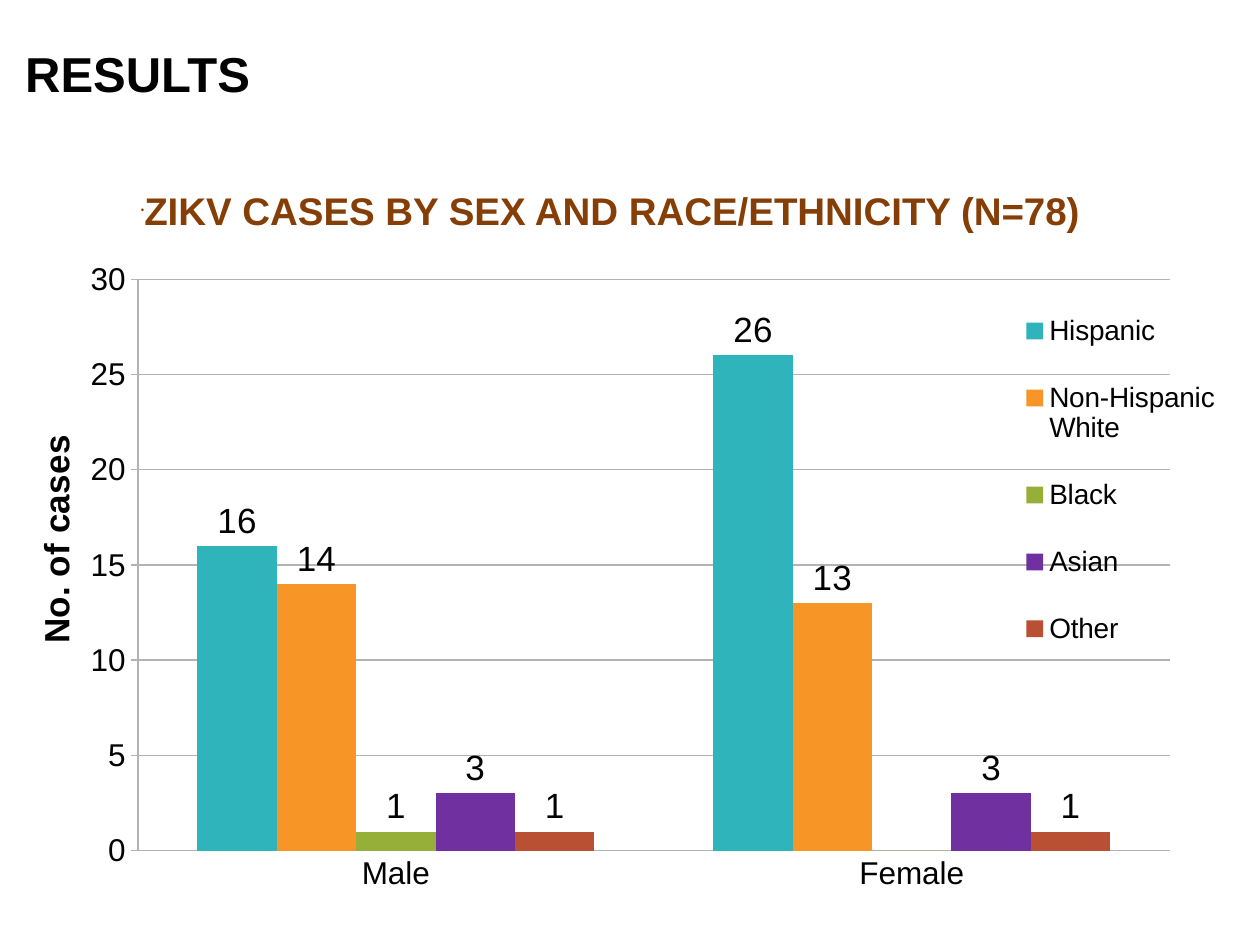
from lxml import etree
from pptx import Presentation
from pptx import util as u
from pptx.chart.data import CategoryChartData
from pptx.dml.color import RGBColor
from pptx.enum import chart as charts, text
from pptx.oxml.ns import qn

COLORS = {
    "text": "020202", "heading": "863E07", "grid": "B3B3B3",
    "Hispanic": "2FB4BC", "Non-Hispanic White": "F79527",
    "Black": "95AF39", "Asian": "7030A0", "Other": "B95033",
}
CASES = {
    "Hispanic": (16, 26), "Non-Hispanic White": (14, 13),
    "Black": (1, 0), "Asian": (3, 3), "Other": (1, 1),
}


def style_font(font, size, color="text", bold=False):
    font.name = "Arial"
    font.size = u.Pt(size)
    font.bold = bold
    font.color.rgb = RGBColor.from_string(COLORS[color])


def set_layout(parent, index, inner=False, **shares):
    for old in parent.findall(qn("c:layout")):
        parent.remove(old)
    layout = etree.Element(qn("c:layout"))
    parent.insert(index, layout)
    manual = etree.SubElement(layout, qn("c:manualLayout"))
    settings = {"layoutTarget": "inner"} if inner else {}
    settings.update(xMode="edge", yMode="edge", **shares)
    for name, value in settings.items():
        etree.SubElement(manual, qn(f"c:{name}")).set("val", str(value))


presentation = Presentation()
presentation.slide_width = u.Inches(10)
presentation.slide_height = u.Inches(7.5)
slide = presentation.slides.add_slide(presentation.slide_layouts[1])

title, heading = slide.placeholders
title.left, title.top = u.Inches(0.2), u.Inches(0.3)
title.width, title.height = u.Inches(6.18), u.Inches(0.52)
frame = title.text_frame
frame.text = "RESULTS"
frame.vertical_anchor = text.MSO_ANCHOR.BOTTOM
frame.auto_size = text.MSO_AUTO_SIZE.NONE
frame.margin_left = frame.margin_right = frame.margin_top = frame.margin_bottom = 0
paragraph = frame.paragraphs[0]
paragraph.alignment = text.PP_ALIGN.LEFT
paragraph.line_spacing = 0.9
style_font(paragraph.font, 28, bold=True)

heading.left, heading.top = u.Inches(0.2), u.Inches(1.25)
heading.width, heading.height = u.Inches(9.29), u.Inches(0.52)
frame = heading.text_frame
frame.text = "ZIKV CASES BY SEX AND RACE/ETHNICITY (N=78)"
frame.auto_size = text.MSO_AUTO_SIZE.NONE
paragraph = frame.paragraphs[0]
paragraph.alignment = text.PP_ALIGN.CENTER
paragraph.line_spacing = 1.5
paragraph.space_before = u.Pt(0)
paragraph.space_after = u.Pt(10)
properties = paragraph._p.get_or_add_pPr()
properties.set("marL", "0")
properties.set("indent", "0")
etree.SubElement(properties, qn("a:buSzPct")).set("val", "25000")
etree.SubElement(properties, qn("a:buChar")).set("char", "•")
style_font(paragraph.font, 22, "heading", bold=True)

data = CategoryChartData(number_format="General")
data.categories = ["Male", "Female"]
for group, values in CASES.items():
    data.add_series(group, values)
chart = slide.shapes.add_chart(
    charts.XL_CHART_TYPE.COLUMN_CLUSTERED,
    u.Inches(0.12), u.Inches(2), u.Inches(9.75), u.Inches(5.4), data).chart
style_font(chart.font, 20)
chart.has_title = False
plot = chart.plots[0]
plot.gap_width = 150
plot.overlap = 0
plot.vary_by_categories = False
set_layout(chart._chartSpace.chart.plotArea, 0, inner=True, x=0.1, y=0.04, w=0.84, h=0.84)

for series in plot.series:
    series.format.fill.solid()
    series.format.fill.fore_color.rgb = RGBColor.from_string(COLORS[series.name])
    labels = series.data_labels
    labels.show_value = True
    labels.position = charts.XL_LABEL_POSITION.OUTSIDE_END
    style_font(labels.font, 20)
    for index, value in enumerate(series.values):
        if value == 0:
            hidden = etree.Element(qn("c:dLbl"))
            etree.SubElement(hidden, qn("c:idx")).set("val", str(index))
            etree.SubElement(hidden, qn("c:delete")).set("val", "1")
            labels._element.insert(0, hidden)

category_axis, value_axis = chart.category_axis, chart.value_axis
category_axis.major_tick_mark = charts.XL_TICK_MARK.NONE
value_axis.major_tick_mark = charts.XL_TICK_MARK.OUTSIDE
value_axis.minimum_scale, value_axis.maximum_scale = 0, 30
value_axis.major_unit = 5
value_axis.has_major_gridlines = True
for axis in (category_axis, value_axis):
    style_font(axis.tick_labels.font, 18)
for lined in (category_axis, value_axis, value_axis.major_gridlines):
    lined.format.line.color.rgb = RGBColor.from_string(COLORS["grid"])
    lined.format.line.width = u.Pt(0.75)

axis_title = value_axis.axis_title
axis_title.text_frame.text = "No. of cases"
style_font(axis_title.text_frame.paragraphs[0].font, 20, bold=True)
axis_title.text_frame._txBody.bodyPr.set("rot", "-5400000")
axis_title.text_frame._txBody.bodyPr.set("vert", "horz")
set_layout(axis_title._element, 1, x=0.01, y=0.26)

chart.has_legend = True
legend = chart.legend
legend.position = charts.XL_LEGEND_POSITION.RIGHT
legend.include_in_layout = False
style_font(legend.font, 16)
set_layout(legend._element, 1, x=0.81, y=0.04, w=0.18, h=0.59)

presentation.save("out.pptx")
